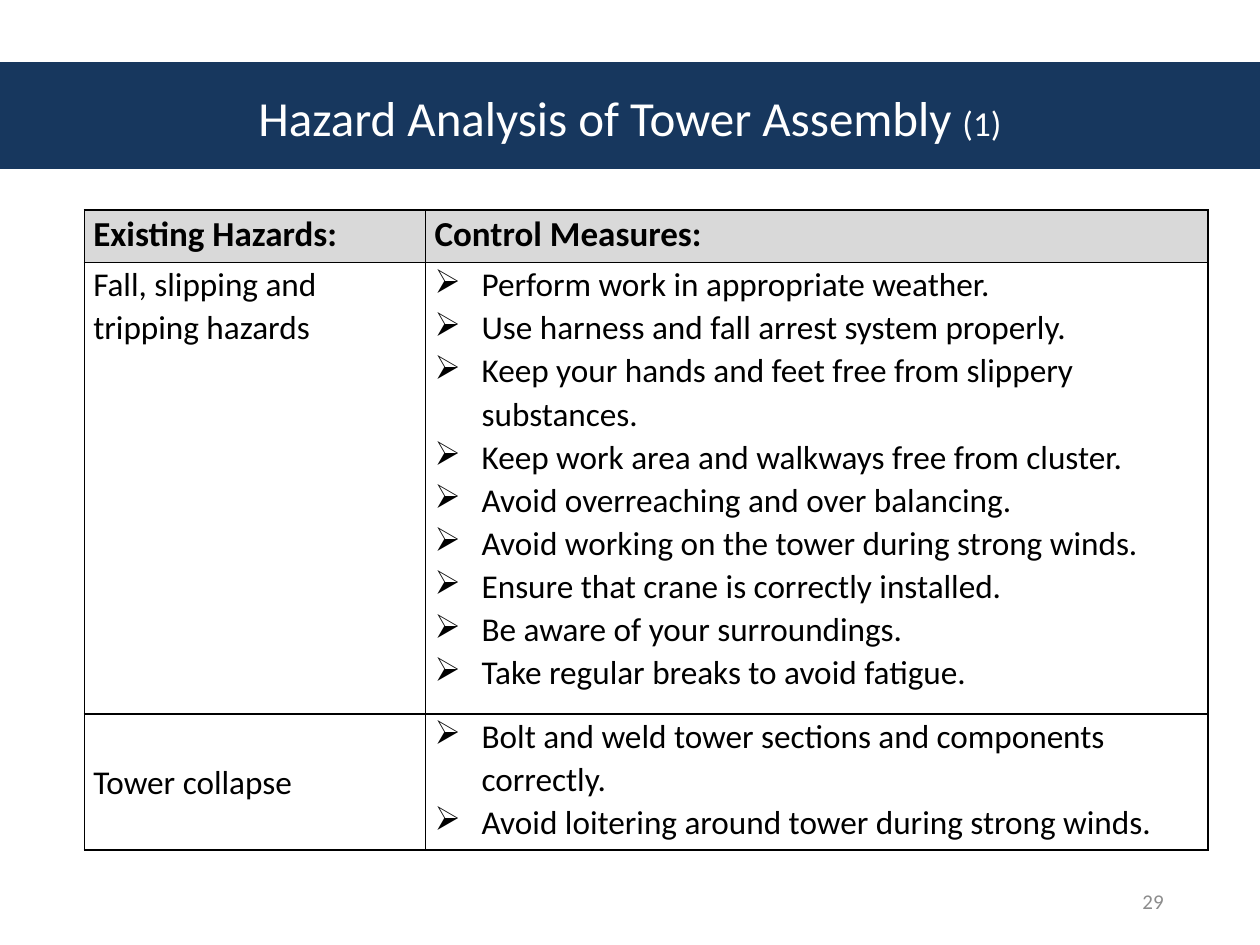
"""Build the tower assembly hazard slide."""
from lxml.etree import SubElement
from pptx import Presentation
from pptx.dml.color import RGBColor
from pptx.enum.shapes import MSO_SHAPE
from pptx.enum.text import MSO_ANCHOR, PP_ALIGN
from pptx.oxml import parse_xml
from pptx.oxml.ns import nsdecls, qn
from pptx.util import Cm, Pt

NAVY = RGBColor(0x17, 0x37, 0x5E)
WHITE = RGBColor(0xFF, 0xFF, 0xFF)
BLACK = RGBColor(0, 0, 0)
PALE = RGBColor(0xD9, 0xD9, 0xD9)
GREY = RGBColor(0x8C, 0x8C, 0x8C)

TITLE = [("Hazard Analysis of Tower Assembly ", 28), ("(1)", 20)]
HEADS = ["Existing Hazards:", "Control Measures:"]
RISKS = [
    ("Fall, slipping and tripping hazards", [
        "Perform work in appropriate weather.",
        "Use harness and fall arrest system properly.",
        "Keep your hands and feet free from slippery substances.",
        "Keep work area and walkways free from cluster.",
        "Avoid overreaching and over balancing.",
        "Avoid working on the tower during strong winds.",
        "Ensure that crane is correctly installed.",
        "Be aware of your surroundings.",
        "Take regular breaks to avoid fatigue.",
    ]),
    ("Tower collapse", [
        "Bolt and weld tower sections and components correctly.",
        "Avoid loitering around tower during strong winds.",
    ]),
]
COLS = [6.88, 15.77]
ROWS = [1.06, 9.1, 2.74]
INSET = {"margin_left": Cm(0.18), "margin_right": Cm(0.18),
         "margin_top": 0, "margin_bottom": 0}
HEAD = {"size": Pt(20), "bold": True}
BODY = {"size": Pt(19), "bold": False}


def apply(item, form):
    for name, value in form.items():
        setattr(item, name, value)


def write(para, text, color, form):
    run = para.add_run()
    run.text = text
    apply(run.font, {"name": "Calibri", **form})
    run.font.color.rgb = color


def label(slide, box, parts, color, align):
    frame = slide.shapes.add_textbox(*map(Cm, box)).text_frame
    apply(frame, {"word_wrap": True, "vertical_anchor": MSO_ANCHOR.MIDDLE})
    para = frame.paragraphs[0]
    para.alignment = align
    for text, size in parts:
        write(para, text, color, {"size": Pt(size)})


def edge(cell):
    props = cell._tc.get_or_add_tcPr()
    for spot, side in enumerate("LRTB"):
        props.insert(spot, parse_xml(
            f'<a:ln{side} {nsdecls("a")} w="12700"><a:solidFill>'
            f'<a:srgbClr val="{BLACK}"/></a:solidFill></a:ln{side}>'))


def fill(cell, lines, form, back, mark=False, mid=False):
    apply(cell, INSET)
    cell.vertical_anchor = MSO_ANCHOR.MIDDLE if mid else MSO_ANCHOR.TOP
    cell.fill.solid()
    cell.fill.fore_color.rgb = back
    edge(cell)
    frame = cell.text_frame
    for spot, text in enumerate(lines):
        para = frame.add_paragraph() if spot else frame.paragraphs[0]
        para.line_spacing = 1.07
        write(para, text, BLACK, form)
        if mark:
            props = para._p.get_or_add_pPr()
            props.set("marL", str(Cm(0.95)))
            props.set("indent", str(-Cm(0.95)))
            SubElement(props, qn("a:buChar")).set("char", "➢")


def main():
    deck = Presentation()
    apply(deck, {"slide_width": Cm(25.4), "slide_height": Cm(19.05)})
    slide = deck.slides.add_slide(deck.slide_layouts[6])

    band = slide.shapes.add_shape(
        MSO_SHAPE.RECTANGLE, 0, Cm(1.27), deck.slide_width, Cm(2.12))
    band.shadow.inherit = False
    band.fill.solid()
    band.fill.fore_color.rgb = NAVY
    band.line.color.rgb = NAVY
    band.line.width = Pt(0.75)
    label(slide, (1.27, 0.76, 22.86, 3.18), TITLE, WHITE, PP_ALIGN.CENTER)

    grid = slide.shapes.add_table(
        len(ROWS), len(COLS), Cm(1.7), Cm(4.23),
        Cm(sum(COLS)), Cm(sum(ROWS))).table
    apply(grid, {"first_row": False, "horz_banding": False})
    for col, width in zip(grid.columns, COLS):
        col.width = Cm(width)
    for row, height in zip(grid.rows, ROWS):
        row.height = Cm(height)
    for spot, text in enumerate(HEADS):
        fill(grid.cell(0, spot), [text], HEAD, PALE)
    for spot, (risk, steps) in enumerate(RISKS, 1):
        fill(grid.cell(spot, 0), [risk], BODY, WHITE, mid=spot > 1)
        fill(grid.cell(spot, 1), steps, BODY, WHITE, mark=True)

    label(slide, (17.78, 17.65, 5.93, 1.02), [("29", 12)], GREY,
          PP_ALIGN.RIGHT)
    deck.save("out.pptx")


if __name__ == "__main__":
    main()
